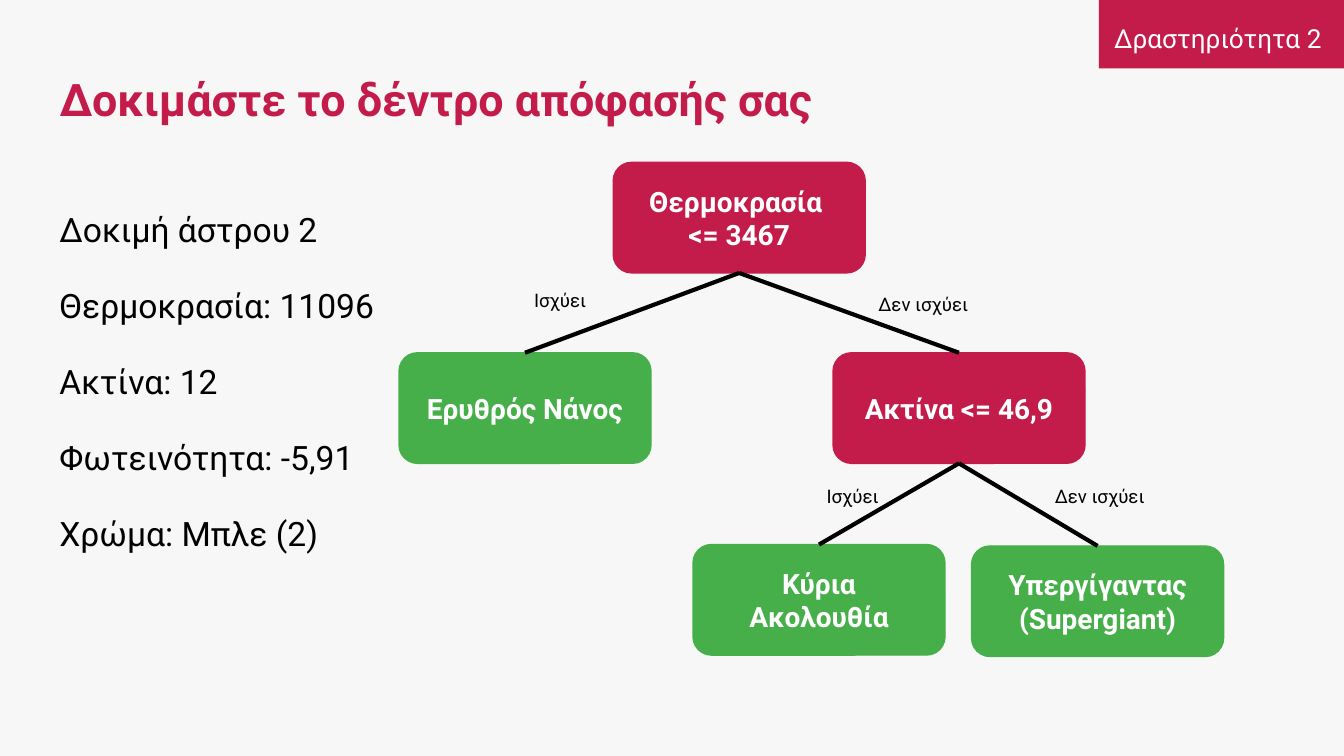
"""Build the decision tree slide for testing star 2."""
from pptx import Presentation
from pptx.dml.color import RGBColor
from pptx.enum.shapes import MSO_CONNECTOR, MSO_SHAPE
from pptx.enum.text import MSO_ANCHOR, MSO_AUTO_SIZE, PP_ALIGN
from pptx.oxml.ns import qn
from pptx.util import Pt
from lxml.etree import SubElement

PX = 9525
CRIMSON, GREEN, WHITE, BLACK = "C31C4A", "46AF4A", "FFFFFF", "000000"
NODE_WIDTH, NODE_HEIGHT = 180, 79


def color(hex_value):
    return RGBColor.from_string(hex_value)


def style_text(frame, size, hex_value, bold=False, align=PP_ALIGN.LEFT,
               anchor=MSO_ANCHOR.TOP, line_spacing=1.0):
    frame.word_wrap = True
    frame.auto_size = MSO_AUTO_SIZE.NONE
    frame.vertical_anchor = anchor
    frame.margin_left = frame.margin_right = Pt(7.2)
    frame.margin_top = frame.margin_bottom = Pt(7.2)
    for paragraph in frame.paragraphs:
        paragraph.alignment = align
        paragraph.line_spacing = line_spacing
        for run in paragraph.runs:
            run.font.name = "Roboto"
            run.font.size = Pt(size)
            run.font.bold = bold
            run.font.color.rgb = color(hex_value)


presentation = Presentation()
presentation.slide_width = 960 * PX
presentation.slide_height = 540 * PX
slide = presentation.slides.add_slide(presentation.slide_layouts[5])
slide.background.fill.solid()
slide.background.fill.fore_color.rgb = color("F7F7F7")
shapes = slide.shapes

banner = shapes.add_shape(MSO_SHAPE.RECTANGLE, 785 * PX, 0, 175 * PX, 49 * PX)
banner.shadow.inherit = False
banner.fill.solid()
banner.fill.fore_color.rgb = color(CRIMSON)
banner.line.fill.background()

heading = shapes.title
heading.left, heading.top, heading.width, heading.height = (
    33 * PX, 34 * PX, 895 * PX, 73 * PX)
heading.text_frame.text = "Δοκιμάστε το δέντρο απόφασής σας"
style_text(heading.text_frame, 24, CRIMSON, bold=True, anchor=MSO_ANCHOR.MIDDLE)

nodes = {}
for key, label, left, top, fill in [
    ("temperature", "Θερμοκρασία \n<= 3467", 438, 116, CRIMSON),
    ("radius", "Ακτίνα <= 46,9", 595, 252, CRIMSON),
    ("red dwarf", "Ερυθρός Νάνος", 285, 252, GREEN),
    ("main sequence", "Κύρια Ακολουθία", 495, 389, GREEN),
    ("supergiant", "Υπεργίγαντας (Supergiant)", 694, 390, GREEN),
]:
    node = shapes.add_shape(MSO_SHAPE.ROUNDED_RECTANGLE, left * PX, top * PX,
                            NODE_WIDTH * PX, NODE_HEIGHT * PX)
    node.shadow.inherit = False
    node.fill.solid()
    node.fill.fore_color.rgb = color(fill)
    node.line.color.rgb = color(fill)
    node.line.width = Pt(0.75)
    node.text_frame.paragraphs[0].text = label
    style_text(node.text_frame, 15, WHITE, bold=True, align=PP_ALIGN.CENTER,
               anchor=MSO_ANCHOR.MIDDLE)
    nodes[key] = node

for parent, child in [
    ("temperature", "radius"),
    ("temperature", "red dwarf"),
    ("radius", "supergiant"),
    ("radius", "main sequence"),
]:
    branch = shapes.add_connector(MSO_CONNECTOR.STRAIGHT, 0, 0, 0, 0)
    branch.begin_connect(nodes[parent], 2)
    branch.end_connect(nodes[child], 0)
    branch.line.color.rgb = color(BLACK)
    branch.line.width = Pt(2.25)
    SubElement(branch.element.spPr, qn("a:effectLst"))

for answer, left, top, width in [
    ("Ισχύει", 372, 194, 81),
    ("Δεν ισχύει", 618, 197, 126),
    ("Ισχύει", 581, 334, 81),
    ("Δεν ισχύει", 744, 334, 208),
]:
    branch_label = shapes.add_textbox(left * PX, top * PX, width * PX, 36 * PX)
    branch_label.text_frame.text = answer
    style_text(branch_label.text_frame, 10, BLACK, line_spacing=1.15)

star_data = shapes.add_textbox(33 * PX, 135 * PX, 267 * PX, 372 * PX)
star_data.text_frame.text = "\n".join([
    "Δοκιμή άστρου 2",
    "Θερμοκρασία: 11096",
    "Ακτίνα: 12",
    "Φωτεινότητα: -5,91",
    "Χρώμα: Μπλε (2)",
])
style_text(star_data.text_frame, 18, BLACK, line_spacing=1.15)
for measurement in star_data.text_frame.paragraphs[1:]:
    measurement.space_before = Pt(16)

activity = shapes.add_textbox(785 * PX, 3 * PX, 170 * PX, 40 * PX)
activity.text_frame.text = "Δραστηριότητα 2"
style_text(activity.text_frame, 14, WHITE, align=PP_ALIGN.CENTER,
           line_spacing=1.15)

presentation.save("out.pptx")
